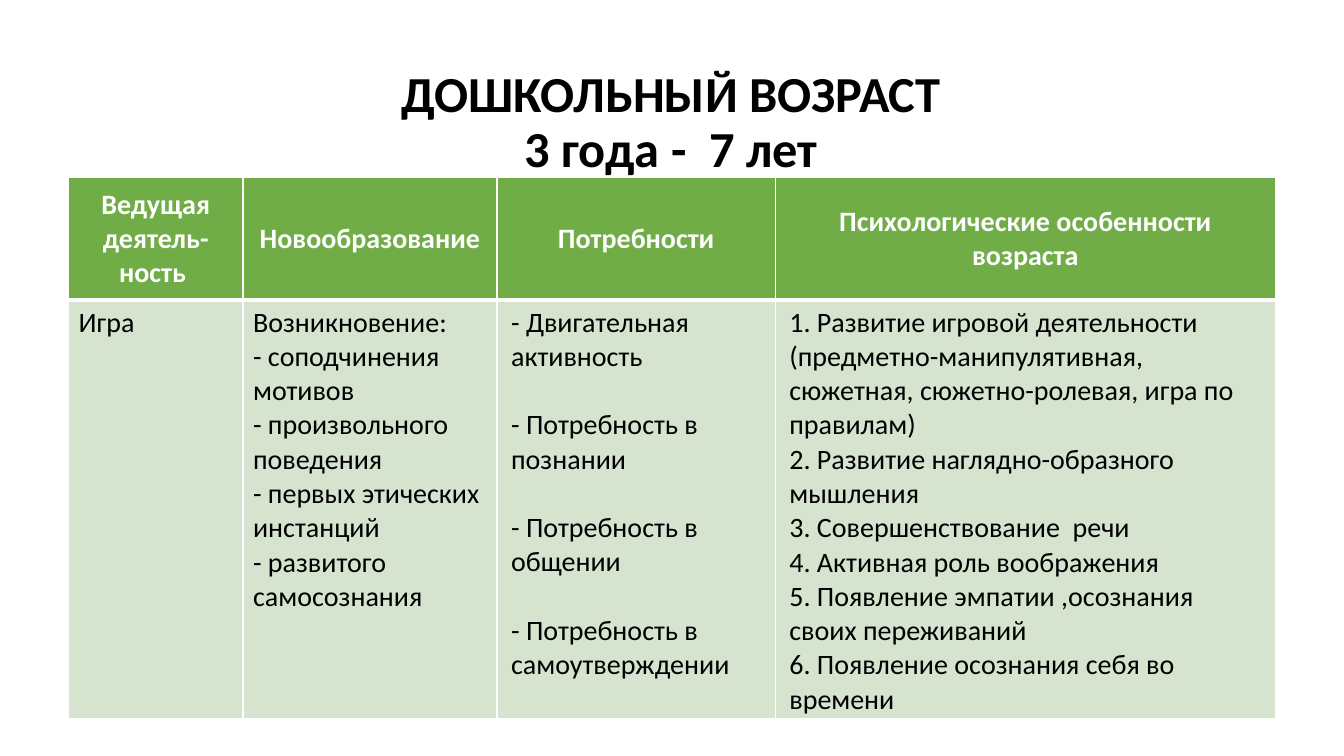
from dataclasses import dataclass

from lxml.etree import SubElement
from pptx import Presentation
from pptx.dml.color import RGBColor
from pptx.enum.text import MSO_ANCHOR, PP_ALIGN
from pptx.oxml.ns import qn
from pptx.slide import Slide
from pptx.table import _Cell
from pptx.text.text import _Paragraph
from pptx.util import Inches, Pt

WHITE = RGBColor(0xFF, 0xFF, 0xFF)
BLACK = RGBColor(0x00, 0x00, 0x00)
GREEN = RGBColor(0x70, 0xAD, 0x47)
PALE_GREEN = RGBColor(0xD5, 0xE3, 0xCF)
FONT = "Calibri"
TITLE_SIZE = 36
TABLE_SIZE = 20
ROW_HEIGHTS = (1.22, 4.15)
TITLE_LINES = ("ДОШКОЛЬНЫЙ ВОЗРАСТ", "3 года -  7 лет")


@dataclass(frozen=True)
class Topic:
    """A table column: its heading, its points and their layout."""
    heading: str
    width: float
    points: tuple[str, ...]
    left_margin: float = 0.1
    gap: float = 0


TOPICS = (
    Topic("Ведущая деятель-ность ", 1.73, ("Игра",)),
    Topic("Новообразование", 2.52, (
        "Возникновение:",
        "- соподчинения мотивов",
        "- произвольного поведения",
        "- первых этических инстанций",
        "- развитого самосознания",
    )),
    Topic("Потребности", 2.76, (
        "- Двигательная активность",
        "- Потребность в познании",
        "- Потребность в общении",
        "- Потребность в самоутверждении",
    ), left_margin=0.14, gap=24.4),
    Topic("Психологические особенности возраста", 4.96, (
        "1. Развитие игровой деятельности (предметно-манипулятивная, "
        "сюжетная, сюжетно-ролевая, игра по правилам)",
        "2. Развитие наглядно-образного мышления",
        "3. Совершенствование  речи",
        "4. Активная роль воображения",
        "5. Появление эмпатии ,осознания своих переживаний",
        "6. Появление осознания себя во времени",
    ), left_margin=0.14),
)


def add_run(paragraph: _Paragraph, text: str, size: float,
            color: RGBColor, bold: bool) -> None:
    run = paragraph.add_run()
    run.text = text
    run.font.name = FONT
    run.font.size = Pt(size)
    run.font.bold = bold
    run.font.color.rgb = color


def set_borders(cell: _Cell, top: float, bottom: float) -> None:
    """Draw white borders, 1 pt at the sides; call before filling the cell."""
    properties = cell._tc.get_or_add_tcPr()
    for tag, width in (("lnL", 1), ("lnR", 1), ("lnT", top), ("lnB", bottom)):
        line = SubElement(properties, qn(f"a:{tag}"), w=str(Pt(width)))
        fill = SubElement(line, qn("a:solidFill"))
        SubElement(fill, qn("a:srgbClr"), val=str(WHITE))


def fill_cell(cell: _Cell, color: RGBColor) -> None:
    cell.fill.solid()
    cell.fill.fore_color.rgb = color


def add_title(slide: Slide) -> None:
    title = slide.shapes.add_textbox(
        Inches(2.57), Inches(0.6), Inches(8.17), Inches(1.25))
    frame = title.text_frame
    frame.word_wrap = True
    frame.vertical_anchor = MSO_ANCHOR.MIDDLE
    paragraph = frame.paragraphs[0]
    paragraph.alignment = PP_ALIGN.CENTER
    paragraph.line_spacing = 0.9
    for index, line in enumerate(TITLE_LINES):
        if index:
            paragraph.add_line_break()
        add_run(paragraph, line, TITLE_SIZE, BLACK, True)


def write_heading(cell: _Cell, topic: Topic) -> None:
    set_borders(cell, 1, 3)
    fill_cell(cell, GREEN)
    cell.vertical_anchor = MSO_ANCHOR.MIDDLE
    paragraph = cell.text_frame.paragraphs[0]
    paragraph.alignment = PP_ALIGN.CENTER
    add_run(paragraph, topic.heading, TABLE_SIZE, WHITE, True)


def write_points(cell: _Cell, topic: Topic) -> None:
    set_borders(cell, 3, 1)
    fill_cell(cell, PALE_GREEN)
    cell.margin_left = Inches(topic.left_margin)
    frame = cell.text_frame
    for index, point in enumerate(topic.points):
        paragraph = frame.add_paragraph() if index else frame.paragraphs[0]
        if index and topic.gap:
            paragraph.space_before = Pt(topic.gap)
        add_run(paragraph, point, TABLE_SIZE, BLACK, False)


def add_topic_table(slide: Slide) -> None:
    table = slide.shapes.add_table(
        len(ROW_HEIGHTS), len(TOPICS), Inches(0.68), Inches(1.76),
        Inches(sum(topic.width for topic in TOPICS)),
        Inches(sum(ROW_HEIGHTS))).table
    table.horz_banding = False
    for row, height in zip(table.rows, ROW_HEIGHTS):
        row.height = Inches(height)
    for column, topic in enumerate(TOPICS):
        table.columns[column].width = Inches(topic.width)
        write_heading(table.cell(0, column), topic)
        write_points(table.cell(1, column), topic)


def main() -> None:
    presentation = Presentation()
    presentation.slide_width = Inches(13.33)
    presentation.slide_height = Inches(7.5)
    slide = presentation.slides.add_slide(presentation.slide_layouts[6])
    add_title(slide)
    add_topic_table(slide)
    presentation.save("out.pptx")


if __name__ == "__main__":
    main()
